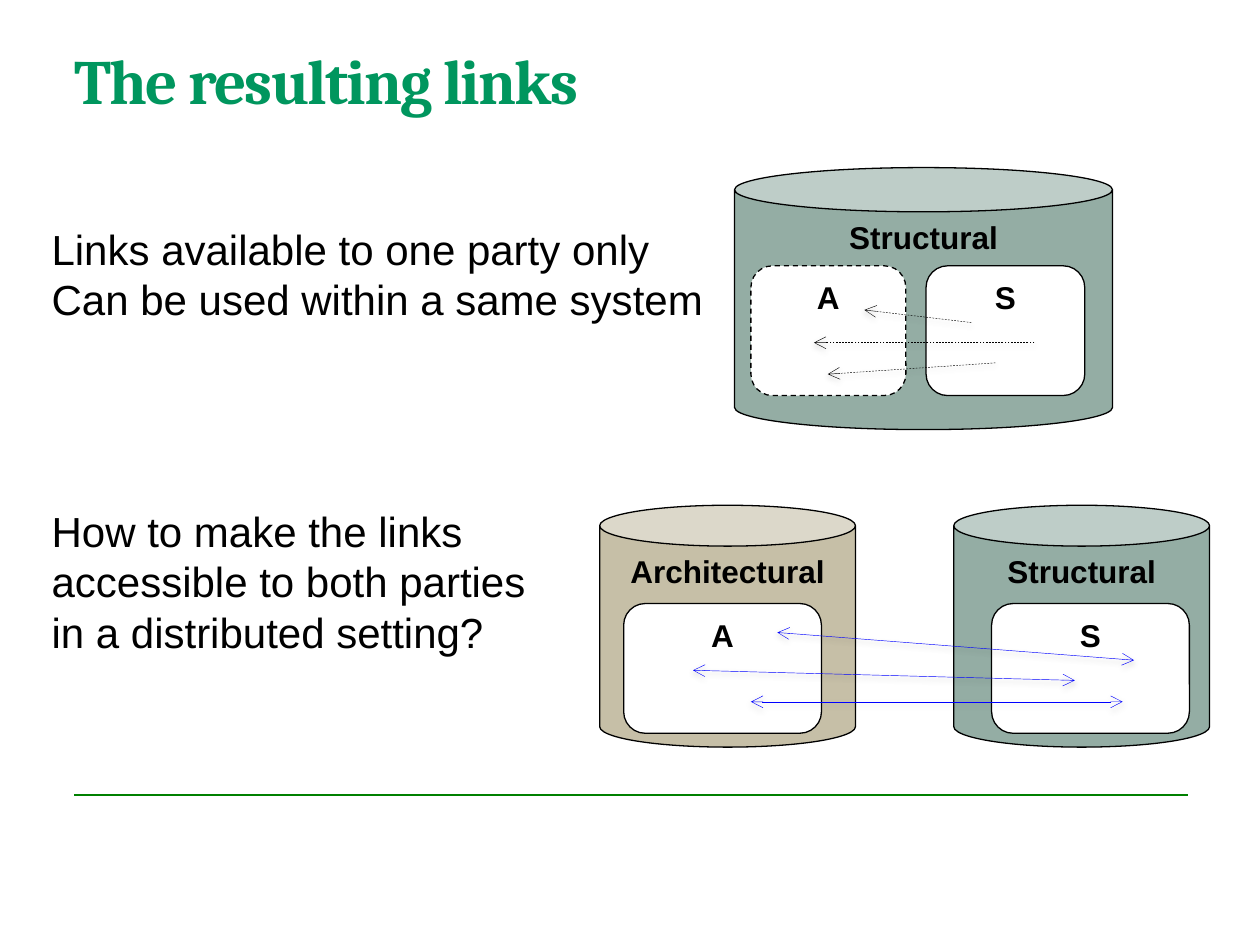
import pptx
import pptx.dml.color
import pptx.enum.dml
import pptx.enum.shapes
import pptx.enum.text
import pptx.oxml
import pptx.oxml.ns
import pptx.util
from pptx.util import Inches

RGBColor = pptx.dml.color.RGBColor
BLACK = RGBColor(0x00, 0x00, 0x00)
WHITE = RGBColor(0xFF, 0xFF, 0xFF)
BLUE = RGBColor(0x00, 0x00, 0xFF)
RULE_GREEN = RGBColor(0x00, 0x80, 0x00)
TITLE_GREEN = RGBColor(0x00, 0x96, 0x5E)
SAGE = RGBColor(0x94, 0xAD, 0xA4)
SAND = RGBColor(0xC6, 0xBF, 0xA7)
CAN = pptx.enum.shapes.MSO_SHAPE.CAN
BOX = pptx.enum.shapes.MSO_SHAPE.ROUNDED_RECTANGLE
DASH = pptx.enum.dml.MSO_LINE.DASH
NAMESPACE = pptx.oxml.ns.nsdecls("a")
SHADOW = (
    f'<a:effectLst {NAMESPACE}><a:outerShdw blurRad="40000" dist="20000" dir="5400000" '
    'rotWithShape="0"><a:srgbClr val="000000"><a:alpha val="38000"/></a:srgbClr>'
    "</a:outerShdw></a:effectLst>"
)
NO_SHADOW = f"<a:effectLst {NAMESPACE}/>"


def add_line(start, end, color, width, dash=None, ends=(), effect=SHADOW):
    line = slide.shapes.add_connector(
        pptx.enum.shapes.MSO_CONNECTOR.STRAIGHT,
        *[Inches(value) for value in start + end],
    )
    line.line.color.rgb = color
    line.line.width = pptx.util.Pt(width)
    if dash:
        line.line.dash_style = dash
    outline = line.line._get_or_add_ln()
    for end_name in ends:
        outline.append(pptx.oxml.parse_xml(f'<a:{end_name} {NAMESPACE} type="arrow"/>'))
    line._element.spPr.append(pptx.oxml.parse_xml(effect))


def add_text(place, lines, size, font_name, color, bold=False):
    shape = slide.shapes.add_textbox(*[Inches(value) for value in place])
    frame = shape.text_frame
    frame.word_wrap = True
    frame.margin_left = frame.margin_right = frame.margin_top = frame.margin_bottom = 0
    frame.text = lines
    for paragraph in frame.paragraphs:
        for run in paragraph.runs:
            run.font.size = pptx.util.Pt(size)
            run.font.name = font_name
            run.font.bold = bold
            run.font.color.rgb = color
    return frame


presentation = pptx.Presentation()
presentation.slide_width = Inches(10)
presentation.slide_height = Inches(7.5)
slide = presentation.slides.add_slide(presentation.slide_layouts[6])

add_line((0.59, 6.31), (9.43, 6.31), RULE_GREEN, 1, effect=NO_SHADOW)

title = add_text((0.59, 0.42, 8.84, 0.69), "The resulting links", 36, "Cambria", TITLE_GREEN, True)
title.paragraphs[0].line_spacing = 0.85
title.paragraphs[0].runs[0].font._element.set("spc", "-100")

add_text(
    (0.41, 1.77, 5.23, 0.81),
    "Links available to one party only\nCan be used within a same system",
    24, "Arial", BLACK,
)
add_text(
    (0.41, 4.01, 4.2, 1.21),
    "How to make the links accessible to both parties \vin a distributed setting?",
    24, "Arial", BLACK,
)

for kind, place, label, fill, dash in [
    (CAN, (5.83, 1.33, 3, 2.08), "Structural", SAGE, None),
    (BOX, (5.96, 2.11, 1.23, 1.03), "A", WHITE, DASH),
    (BOX, (7.35, 2.11, 1.26, 1.03), "S", WHITE, None),
    (CAN, (7.57, 4.01, 2.03, 1.92), "Structural", SAGE, None),
    (BOX, (7.87, 4.79, 1.57, 1.03), "S", WHITE, None),
    (CAN, (4.76, 4.01, 2.03, 1.92), "Architectural", SAND, None),
    (BOX, (4.95, 4.79, 1.57, 1.03), "A", WHITE, None),
]:
    shape = slide.shapes.add_shape(kind, *[Inches(value) for value in place])
    shape.shadow.inherit = False
    if kind == CAN:
        shape.adjustments[0] = 0.169
    shape.fill.solid()
    shape.fill.fore_color.rgb = fill
    shape.line.color.rgb = BLACK
    shape.line.width = pptx.util.Pt(0.75)
    if dash:
        shape.line.dash_style = dash
    frame = shape.text_frame
    frame.text = label
    frame.vertical_anchor = pptx.enum.text.MSO_ANCHOR.TOP
    paragraph = frame.paragraphs[0]
    paragraph.alignment = pptx.enum.text.PP_ALIGN.CENTER
    font = paragraph.runs[0].font
    font.size = pptx.util.Pt(18)
    font.name = "Arial"
    font.bold = True
    font.color.rgb = BLACK

for start, end in [
    ((9, 5.24), (6.17, 5.02)),
    ((8.53, 5.4), (5.5, 5.32)),
    ((8.91, 5.57), (5.96, 5.57)),
]:
    add_line(start, end, BLUE, 0.25, ends=("headEnd", "tailEnd"))

for start, end in [
    ((7.71, 2.56), (6.86, 2.46)),
    ((8.21, 2.72), (6.46, 2.72)),
    ((7.9, 2.88), (6.57, 2.97)),
]:
    add_line(start, end, BLACK, 0.25, DASH, ("tailEnd",))

presentation.save("out.pptx")
